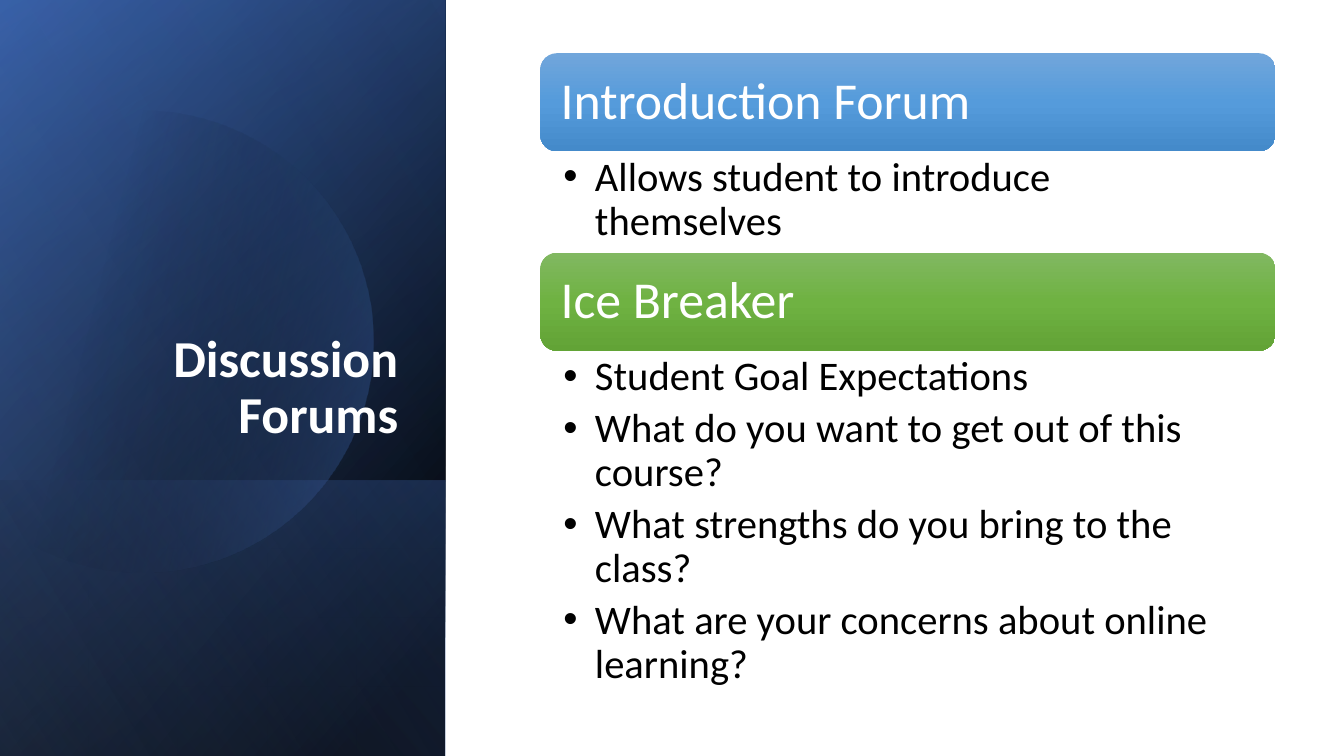
import math

from lxml import etree
from pptx import Presentation
from pptx.dml.color import RGBColor
from pptx.enum.shapes import MSO_SHAPE
from pptx.enum.text import MSO_ANCHOR, PP_ALIGN
from pptx.oxml.ns import qn
from pptx.util import Pt

RECTANGLE = MSO_SHAPE.RECTANGLE
ROUNDED = MSO_SHAPE.ROUNDED_RECTANGLE
LEFT, RIGHT = PP_ALIGN.LEFT, PP_ALIGN.RIGHT
TOP, MIDDLE, BOTTOM = MSO_ANCHOR.TOP, MSO_ANCHOR.MIDDLE, MSO_ANCHOR.BOTTOM

FONT = "Calibri"
WHITE, BLACK = "FFFFFF", "000000"
BLUE, DEEP_BLUE, PALE_BLUE = "4472C4", "2F5597", "8FAADC"
PAGE_WIDTH, PAGE_HEIGHT = 960, 540
HEADER_HEIGHT = 70
BULLET_INDENT = 22.5

# Each section: title, gradient colours, bullets, height of the bullet area
SECTIONS = [
    ("Introduction Forum", ("71A6DB", "559BDB", "448ACA"),
     ["Allows student to introduce themselves"], 72.5),
    ("Ice Breaker", ("81B861", "6FB242", "62A336"),
     ["Student Goal Expectations",
      "What do you want to get out of this course?",
      "What strengths do you bring to the class?",
      "What are your concerns about online learning?"], 253.5),
]


def color(value):
    return RGBColor.from_string(value)


def set_gradient(shape, stops, angle):
    """Fill with (position, colour, opacity) stops, all in percent."""
    shape.shadow.inherit = False
    shape.line.fill.background()
    shape.fill.gradient()
    gradient = shape.element.spPr.find(qn("a:gradFill"))
    for child in list(gradient):
        gradient.remove(child)
    stop_list = etree.SubElement(gradient, qn("a:gsLst"))
    for position, value, opacity in stops:
        stop = etree.SubElement(stop_list, qn("a:gs"), pos=str(position * 1000))
        tint = etree.SubElement(stop, qn("a:srgbClr"), val=str(color(value)))
        if opacity < 100:
            etree.SubElement(tint, qn("a:alpha"), val=str(opacity * 1000))
    etree.SubElement(gradient, qn("a:lin"), ang=str(angle * 60000), scaled="0")


def add_bullet(para):
    properties = para._p.get_or_add_pPr()
    indent = Pt(BULLET_INDENT)
    properties.set("marL", str(indent))
    properties.set("indent", str(-indent))
    etree.SubElement(properties, qn("a:buFont"), typeface="Arial")
    etree.SubElement(properties, qn("a:buChar"), char="•")


def write_text(shape, lines, *, size, ink, bold=False, align=LEFT, anchor=TOP,
               margins=(7.2, 3.6, 7.2, 3.6), space_after=0, bullets=False):
    frame = shape.text_frame
    frame.word_wrap = True
    frame.vertical_anchor = anchor
    (frame.margin_left, frame.margin_top,
     frame.margin_right, frame.margin_bottom) = map(Pt, margins)
    for index, line in enumerate(lines):
        para = frame.paragraphs[0] if index == 0 else frame.add_paragraph()
        para.alignment = align
        para.line_spacing = 0.9
        para.space_after = Pt(space_after)
        if bullets:
            add_bullet(para)
        span = para.add_run()
        span.text = line
        span.font.name = FONT
        span.font.size = Pt(size)
        span.font.bold = bold
        span.font.color.rgb = color(ink)


def add_turned_panel(page, box, stops, angle):
    """Cover the box with a mirrored rectangle turned by a quarter."""
    left, top, width, height = box
    shift = (height - width) / 2
    panel = page.shapes.add_shape(
        RECTANGLE, Pt(left - shift), Pt(top + shift), Pt(height), Pt(width))
    panel.rotation = 90
    panel.element.spPr.find(qn("a:xfrm")).set("flipH", "1")
    set_gradient(panel, stops, angle)


def add_cut_circle(page, box):
    """Draw a circle whose left side is cut off by the edge of the box."""
    left, top, _, _ = box
    center_x, center_y, radius = left + 101.5, top + 244, 165
    limit = math.acos((left - center_x) / radius)
    steps = 120
    points = []
    for step in range(steps + 1):
        turn = limit * (2 * step / steps - 1)
        points.append((Pt(center_x + radius * math.cos(turn)),
                       Pt(center_y + radius * math.sin(turn))))
    builder = page.shapes.build_freeform(*points[0])
    builder.add_line_segments(points[1:], close=True)
    set_gradient(builder.convert_to_shape(),
                 [(29, BLACK, 0), (100, BLUE, 43)], 14)


def add_title_panel(page, box):
    left, top, width, height = box
    foot_height = 197
    foot = (left, top + height - foot_height, width, foot_height)

    # Layered gradients
    add_turned_panel(page, box, [(8, BLACK, 100), (100, DEEP_BLUE, 100)], 50)
    add_turned_panel(page, box, [(0, BLACK, 0), (99, BLUE, 46)], 30)
    add_turned_panel(page, foot, [(2, BLUE, 29), (100, BLACK, 30)], 130)
    add_cut_circle(page, box)
    add_turned_panel(page, box, [(0, BLACK, 0), (99, PALE_BLUE, 11)], 120)

    # Slide title
    title = page.shapes.add_textbox(
        Pt(left + 36.5), Pt(top + 132.5), Pt(255), Pt(188.5))
    write_text(title, ["Discussion Forums"], size=37, ink=WHITE, bold=True,
               align=RIGHT, anchor=BOTTOM)


def add_section(page, box, heading, shades, bullets):
    left, top, width, height = box

    # Header bar
    header = page.shapes.add_shape(
        ROUNDED, Pt(left), Pt(top), Pt(width), Pt(HEADER_HEIGHT))
    set_gradient(header, [(index * 50, shade, 100)
                          for index, shade in enumerate(shades)], 90)
    write_text(header, [heading], size=37, ink=WHITE, anchor=MIDDLE,
               margins=(11, 7, 11, 7))

    # Bullet list
    body = page.shapes.add_textbox(
        Pt(left), Pt(top + HEADER_HEIGHT), Pt(width), Pt(height - HEADER_HEIGHT))
    write_text(body, bullets, size=29, ink=BLACK, space_after=5.8,
               margins=(16.5, 3.6, 21, 3.6), bullets=True)


def add_section_list(page, box):
    left, top, width, _ = box
    for heading, shades, bullets, body_height in SECTIONS:
        height = HEADER_HEIGHT + body_height
        add_section(page, (left, top, width, height), heading, shades, bullets)
        top += height


def main():
    deck = Presentation()
    deck.slide_width, deck.slide_height = Pt(PAGE_WIDTH), Pt(PAGE_HEIGHT)
    page = deck.slides.add_slide(deck.slide_layouts[6])
    add_title_panel(page, (0, 0, 318, PAGE_HEIGHT))
    add_section_list(page, (386, 38, 525, 466))
    deck.save("out.pptx")


if __name__ == "__main__":
    main()
